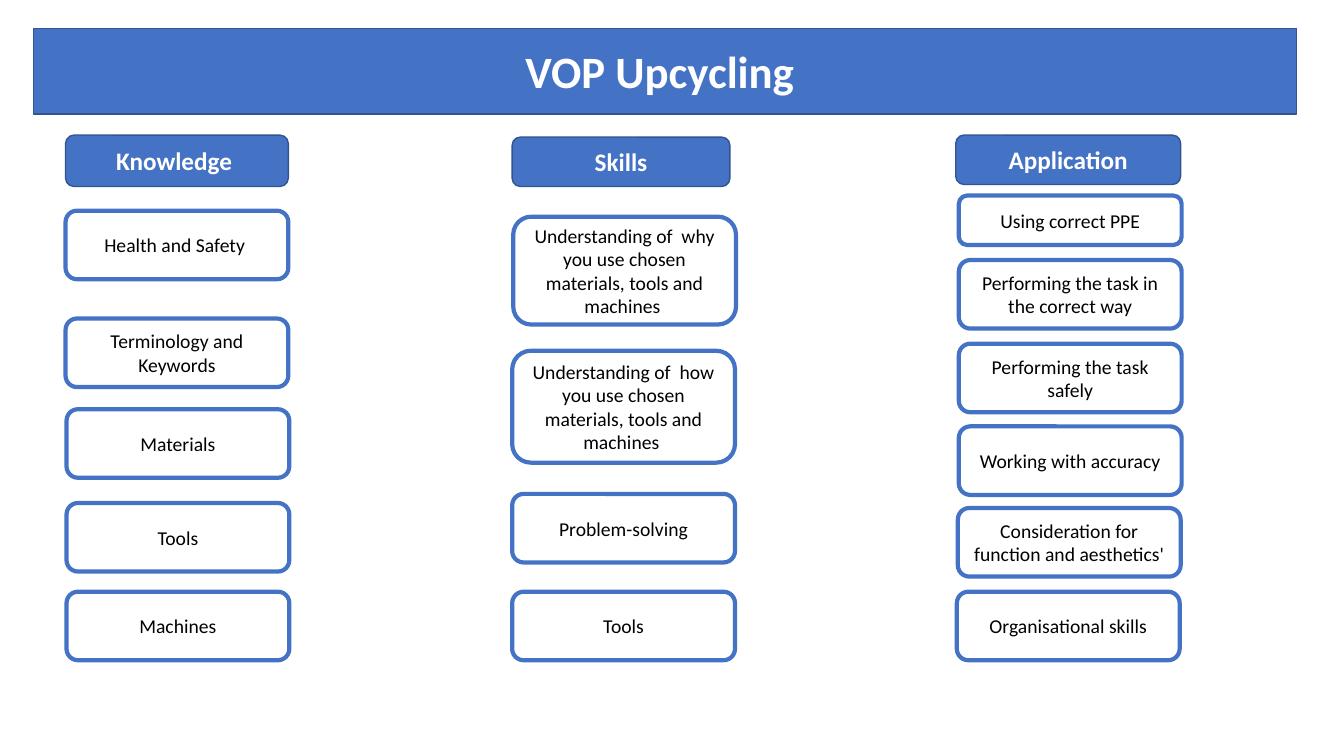
from lxml import etree
from pptx import Presentation
from pptx.dml.color import RGBColor
from pptx.enum import shapes, text
from pptx.oxml import ns
from pptx.util import Inches, Pt

BLUE = RGBColor(0x44, 0x72, 0xC4)
DARK_BLUE = RGBColor(0x32, 0x54, 0x91)
WHITE = RGBColor(0xFF, 0xFF, 0xFF)
BLACK = RGBColor(0, 0, 0)

TITLE = "VOP Upcycling "
TITLE_BOX = (0.33, 0.28, 12.53, 0.85)
CARD_WIDTH = 2.21
CARD_HEIGHT = 0.68

# Each card: wording, left, top, then height where it is not the usual one
COLUMNS = [
    ("Knowledge ", (0.65, 1.34, 2.21, 0.51), [
        ("Health and Safety ", 0.65, 2.09),
        ("Terminology and Keywords", 0.65, 3.16),
        ("Materials", 0.66, 4.06),
        ("Tools", 0.66, 4.99),
        ("Machines", 0.66, 5.87),
    ]),
    ("Skills", (5.08, 1.36, 2.16, 0.49), [
        ("Understanding of  why you use chosen materials, tools and machines ", 5.09, 2.15, 1.07),
        ("Understanding of  how you use chosen materials, tools and machines ", 5.08, 3.48, 1.11),
        ("Problem-solving", 5.08, 4.9),
        ("Tools", 5.08, 5.87),
    ]),
    ("Application", (9.48, 1.34, 2.23, 0.49), [
        ("Using correct PPE", 9.51, 1.94, 0.49),
        ("Performing the task in the correct way", 9.51, 2.58),
        ("Performing the task safely", 9.51, 3.41),
        ("Working with accuracy", 9.51, 4.23),
        ("Consideration for function and aesthetics'", 9.5, 5.04),
        ("Organisational skills", 9.49, 5.87),
    ]),
]


def style_box(shape, wording, size, fill, line, line_width, color, bold):
    """Fill and outline a box and set its centred text."""
    shape.shadow.inherit = False
    shape.fill.solid()
    shape.fill.fore_color.rgb = fill
    shape.line.color.rgb = line
    shape.line.width = Pt(line_width)
    frame = shape.text_frame
    frame.text = wording
    frame.word_wrap = True
    frame.auto_size = text.MSO_AUTO_SIZE.NONE
    frame.vertical_anchor = text.MSO_ANCHOR.MIDDLE
    paragraph = frame.paragraphs[0]
    paragraph.alignment = text.PP_ALIGN.CENTER
    font = paragraph.runs[0].font
    font.name = "Calibri"
    font.size = Pt(size)
    font.bold = bold
    font.color.rgb = color


def style_heading(shape, wording, size):
    """Style a solid blue heading box."""
    style_box(shape, wording, size, BLUE, DARK_BLUE, 1, WHITE, True)


def add_rounded_box(slide, box):
    """Add a rounded rectangle at left, top, width, height in inches."""
    return slide.shapes.add_shape(shapes.MSO_SHAPE.ROUNDED_RECTANGLE, *map(Inches, box))


def add_title(slide):
    """Turn the title placeholder into the rounded banner."""
    title = slide.shapes.title
    title.left, title.top, title.width, title.height = map(Inches, TITLE_BOX)
    geometry = etree.SubElement(title.element.spPr, ns.qn("a:prstGeom"), prst="roundRect")
    etree.SubElement(geometry, ns.qn("a:avLst"))
    style_heading(title, TITLE, 32)


def add_column(slide, heading, heading_box, cards):
    """Add a column heading and the cards below it."""
    style_heading(add_rounded_box(slide, heading_box), heading, 18)
    for wording, left, top, *height in cards:
        card_height = height[0] if height else CARD_HEIGHT
        card = add_rounded_box(slide, (left, top, CARD_WIDTH, card_height))
        style_box(card, wording, 14, WHITE, BLUE, 3, BLACK, False)


def main():
    """Build the slide and save it."""
    presentation = Presentation()
    presentation.slide_width = Inches(13.33)
    presentation.slide_height = Inches(7.5)
    slide = presentation.slides.add_slide(presentation.slide_layouts[5])
    add_title(slide)
    for column in COLUMNS:
        add_column(slide, *column)
    presentation.save("out.pptx")


if __name__ == "__main__":
    main()
